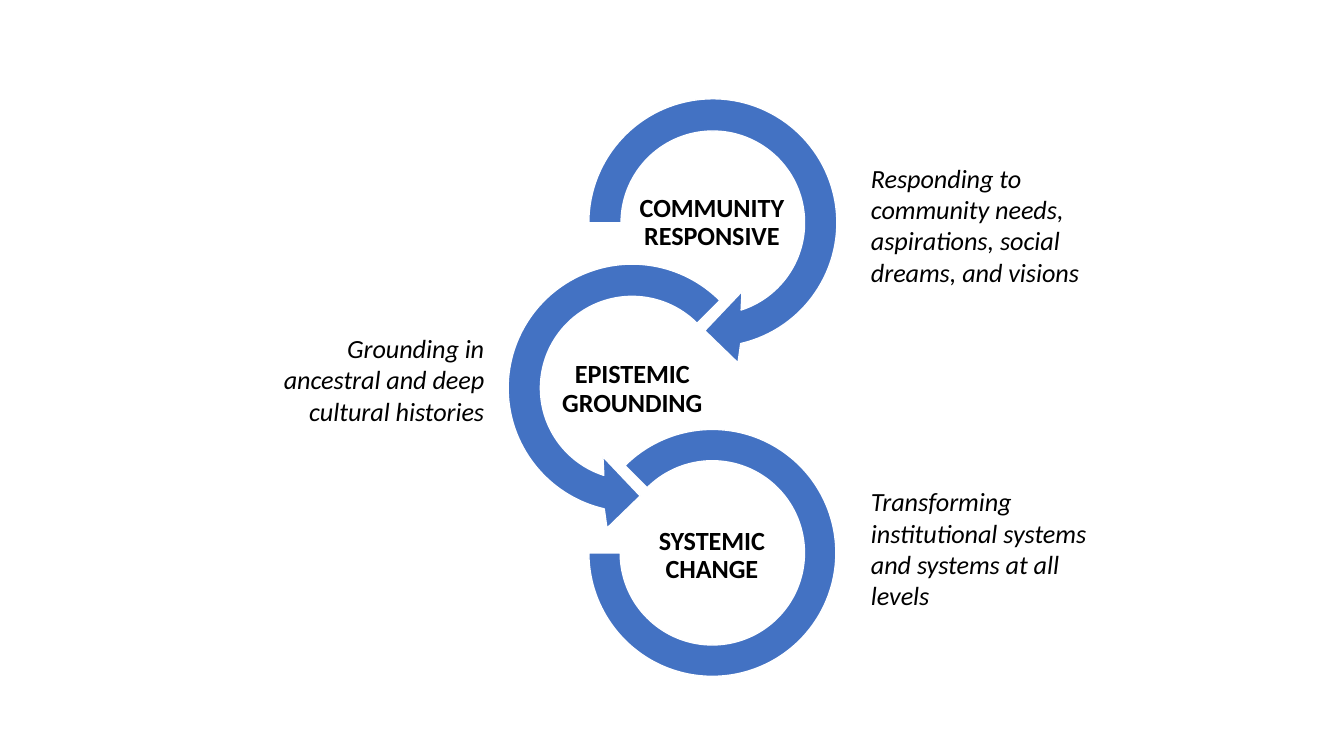
import math

from lxml import etree
from pptx import Presentation
from pptx.dml.color import RGBColor
from pptx.enum import shapes, text
from pptx.oxml import ns
from pptx.util import Inches, Pt

BLUE = RGBColor(0x43, 0x72, 0xC3)
WHITE = RGBColor(0xFF, 0xFF, 0xFF)
BLACK = RGBColor(0, 0, 0)
OUTER, INNER, SPAN = 1.23, 0.91, 2.85
LEFT, RIGHT = 6.27, 7.07
TOP, STEP = 2.21, 1.64
HEAD = [(0.25, 1.39), (-0.08, 1.07), (0.29, 0.68)]


def paint(shape):
    shape.shadow.inherit = False
    shape.fill.solid()
    shape.fill.fore_color.rgb = BLUE
    shape.line.color.rgb = WHITE
    shape.line.width = Pt(1)


def sweep(radius, start, end, count=3):
    step = math.radians(end - start) / count
    pull = 4 / 3 * math.tan(step / 4)

    def spot(angle, bend):
        cos, sin = math.cos(angle), math.sin(angle)
        return radius * (cos - bend * sin), radius * (sin + bend * cos)

    dots = [spot(math.radians(start), 0)]
    for i in range(count):
        angle = math.radians(start) + i * step
        dots += [spot(angle, pull), spot(angle + step, -pull),
                 spot(angle + step, 0)]
    return dots


def add_arrow(slide, x, y, start, side):
    outer, inner = sweep(OUTER, start, 437), sweep(INNER, 432, start)
    half = SPAN / 2
    dots = [(Inches(half + side * dx), Inches(half + dy))
            for dx, dy in outer + HEAD + inner]
    build = slide.shapes.build_freeform(*dots[0])
    build.add_line_segments(dots[1:], close=True)
    form = build.convert_to_shape()
    form.left, form.top = Inches(x - half), Inches(y - half)
    form.width = form.height = Inches(SPAN)

    track = next(form._element.iter(ns.qn("a:path")))
    track.set("w", str(form.width))
    track.set("h", str(form.height))
    for mark, dot in zip(track.iter(ns.qn("a:pt")), dots):
        mark.set("x", str(dot[0]))
        mark.set("y", str(dot[1]))

    lines = track.findall(ns.qn("a:lnTo"))
    bend = len(outer) + len(HEAD)
    for first in (0, 3, 6, bend, bend + 3, bend + 6):
        curve = etree.Element(ns.qn("a:cubicBezTo"))
        lines[first].addprevious(curve)
        for line in lines[first:first + 3]:
            curve.append(line[0])
            track.remove(line)
    paint(form)


def add_ring(slide, x, y):
    ring = slide.shapes.add_shape(
        shapes.MSO_SHAPE.BLOCK_ARC, Inches(x - OUTER), Inches(y - OUTER),
        Inches(2.45), Inches(2.45))
    for i, value in enumerate((135, 108, 0.127)):
        ring.adjustments[i] = value
    paint(ring)


def add_text(slide, words, box, align=text.PP_ALIGN.LEFT, bold=False,
             italic=False, anchor=text.MSO_ANCHOR.TOP, inset=(0.1, 0.05),
             spacing=None, fit=text.MSO_AUTO_SIZE.NONE):
    frame = slide.shapes.add_textbox(*map(Inches, box)).text_frame
    frame.word_wrap = True
    frame.auto_size = fit
    frame.vertical_anchor = anchor
    frame.margin_left = frame.margin_right = Inches(inset[0])
    frame.margin_top = frame.margin_bottom = Inches(inset[1])
    para = frame.paragraphs[0]
    para.alignment = align
    para.line_spacing = spacing
    run = para.add_run()
    run.text = words
    font = run.font
    font.name, font.size = "Calibri", Pt(18.67)
    font.bold, font.italic = bold, italic
    font.color.rgb = BLACK


def add_title(slide, words, x, y):
    add_text(slide, words, (x, y, 1.58, 0.79),
             align=text.PP_ALIGN.CENTER, bold=True,
             anchor=text.MSO_ANCHOR.MIDDLE, inset=(0.01, 0.01), spacing=0.9)


def add_note(slide, words, box, align=text.PP_ALIGN.LEFT):
    add_text(slide, words, box, align=align, italic=True,
             fit=text.MSO_AUTO_SIZE.SHAPE_TO_FIT_TEXT)


def main():
    deck = Presentation()
    deck.slide_width, deck.slide_height = Inches(13.33), Inches(7.5)
    slide = deck.slides.add_slide(deck.slide_layouts[6])

    rows = [TOP + STEP * i for i in range(3)]
    add_arrow(slide, RIGHT, rows[0], 180, 1)
    add_arrow(slide, LEFT, rows[1], 225, -1)
    add_ring(slide, RIGHT, rows[2])

    titles = ["COMMUNITY RESPONSIVE", "EPISTEMIC GROUNDING",
              "SYSTEMIC CHANGE"]
    for i, (words, x) in enumerate(zip(titles, (6.27, 5.48, 6.27))):
        add_title(slide, words, x, 1.82 + 1.65 * i)

    add_note(slide, "Responding to community needs, aspirations, social "
             "dreams, and visions", (8.54, 1.56, 2.36, 1.36))
    add_note(slide, "Transforming institutional systems and systems at all "
             "levels", (8.54, 4.77, 2.36, 1.36))
    add_note(slide, "Grounding in ancestral and deep cultural histories",
             (2.56, 3.25, 2.34, 1.04), text.PP_ALIGN.RIGHT)
    deck.save("out.pptx")


if __name__ == "__main__":
    main()
